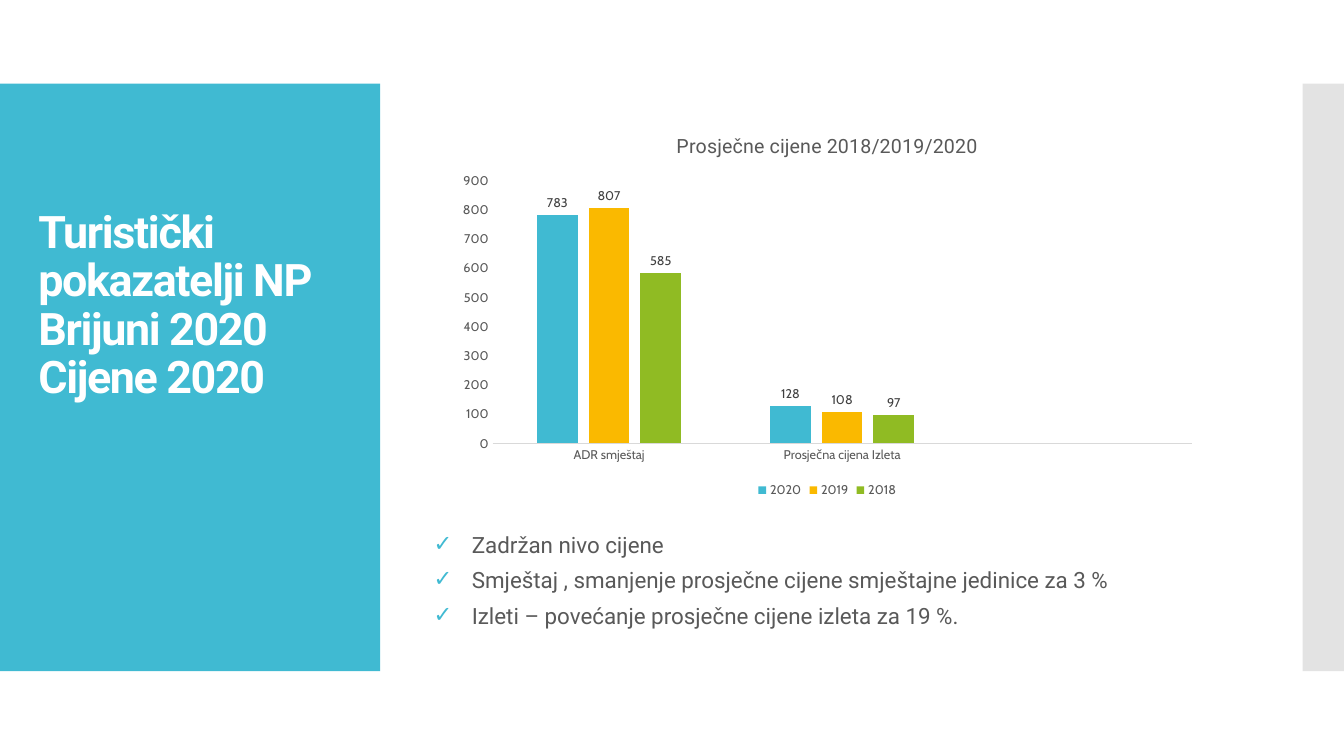
from dataclasses import dataclass

from lxml import etree
from pptx import Presentation
from pptx.chart import data as chart_data
from pptx.dml.color import RGBColor
from pptx.enum import chart as chart_enum, shapes, text
from pptx.oxml import ns
from pptx.util import Inches, Pt


@dataclass(frozen=True)
class Theme:
    accent: str = "40BAD2"
    side_bar: str = "C8C8C8"
    title: str = "FFFFFF"
    body: str = "595959"
    label: str = "404040"
    axis_line: str = "D9D9D9"
    series: tuple = ("40BAD2", "FAB900", "90BB23")
    text_font: str = "Roboto"
    chart_font: str = "Cabin"
    title_size: int = 32
    body_size: int = 16
    chart_title_size: int = 14
    chart_size: int = 9


THEME = Theme()
TITLE = "Turistički pokazatelji NP Brijuni 2020\nCijene 2020"
BULLETS = (
    "Zadržan nivo cijene",
    "Smještaj , smanjenje prosječne cijene smještajne jedinice za 3 %",
    "Izleti – povećanje prosječne cijene izleta za 19 %.",
)
CHART_TITLE = "Prosječne cijene 2018/2019/2020"
CATEGORIES = ("ADR smještaj", "Prosječna cijena Izleta", "")
PRICES = {
    "2020": (783, 128, None),
    "2019": (807, 108, None),
    "2018": (585, 97, None),
}


def color(value):
    return RGBColor.from_string(value)


def style_font(font, name, size, value, bold=False):
    font.name = name
    font.size = Pt(size)
    font.color.rgb = color(value)
    font.bold = bold


def place(shape, left, top, width, height):
    shape.left, shape.top = Inches(left), Inches(top)
    shape.width, shape.height = Inches(width), Inches(height)


def add_panel(slide, left, width, fill, opacity=100):
    panel = slide.shapes.add_shape(
        shapes.MSO_SHAPE.RECTANGLE,
        Inches(left), Inches(0.83), Inches(width), Inches(5.83),
    )
    panel.shadow.inherit = False
    panel.line.fill.background()
    panel.fill.solid()
    panel.fill.fore_color.rgb = color(fill)
    if opacity < 100:
        fill_color = panel.fill._xPr.find(".//" + ns.qn("a:srgbClr"))
        etree.SubElement(fill_color, ns.qn("a:alpha"), val=str(opacity * 1000))


def fill_title(title):
    place(title, 0.28, 1.23, 3.22, 2.82)
    frame = title.text_frame
    frame.text = TITLE
    frame.word_wrap = True
    frame.auto_size = text.MSO_AUTO_SIZE.NONE
    frame.vertical_anchor = text.MSO_ANCHOR.BOTTOM
    for paragraph in frame.paragraphs:
        paragraph.alignment = text.PP_ALIGN.LEFT
        paragraph.line_spacing = 0.9
        paragraph.space_before = Pt(0)
        for run in paragraph.runs:
            style_font(run.font, THEME.text_font, THEME.title_size, THEME.title, True)
            run.font._element.set("spc", "-100")


def add_check_bullet(paragraph):
    properties = paragraph._p.get_or_add_pPr()
    indent = Inches(0.38)
    properties.set("marL", str(indent))
    properties.set("indent", str(-indent))
    bullet_color = etree.SubElement(properties, ns.qn("a:buClr"))
    etree.SubElement(bullet_color, ns.qn("a:srgbClr"), val=THEME.accent)
    etree.SubElement(properties, ns.qn("a:buChar"), char="✓")


def fill_bullets(body):
    place(body, 4.2, 5.29, 8, 1.42)
    frame = body.text_frame
    frame.text = "\n".join(BULLETS)
    frame.word_wrap = True
    frame.auto_size = text.MSO_AUTO_SIZE.NONE
    frame.vertical_anchor = text.MSO_ANCHOR.TOP
    for index, paragraph in enumerate(frame.paragraphs):
        add_check_bullet(paragraph)
        paragraph.line_spacing = 0.7
        paragraph.space_before = Pt(12 if index else 0)
        for run in paragraph.runs:
            style_font(run.font, THEME.text_font, THEME.body_size, THEME.body)


def style_axis(axis):
    axis.has_major_gridlines = False
    axis.major_tick_mark = chart_enum.XL_TICK_MARK.NONE
    axis.minor_tick_mark = chart_enum.XL_TICK_MARK.NONE
    style_font(axis.tick_labels.font, THEME.chart_font, THEME.chart_size, THEME.body)


def style_series(series, fill):
    series.format.fill.solid()
    series.format.fill.fore_color.rgb = color(fill)
    labels = series.data_labels
    labels.show_value = True
    labels.position = chart_enum.XL_LABEL_POSITION.OUTSIDE_END
    style_font(labels.font, THEME.chart_font, THEME.chart_size, THEME.label)


def add_price_chart(slide):
    prices = chart_data.CategoryChartData()
    prices.categories = CATEGORIES
    for year, values in PRICES.items():
        prices.add_series(year, values)
    chart = slide.shapes.add_chart(
        chart_enum.XL_CHART_TYPE.COLUMN_CLUSTERED,
        Inches(4.44), Inches(1.15), Inches(7.53), Inches(3.83), prices,
    ).chart
    style_font(chart.font, THEME.chart_font, THEME.chart_size, THEME.body)

    chart.has_title = True
    title_frame = chart.chart_title.text_frame
    title_frame.text = CHART_TITLE
    style_font(title_frame.paragraphs[0].runs[0].font, THEME.text_font,
               THEME.chart_title_size, THEME.body)
    chart.chart_title.include_in_layout = False

    chart.has_legend = True
    chart.legend.position = chart_enum.XL_LEGEND_POSITION.BOTTOM
    chart.legend.include_in_layout = False
    style_font(chart.legend.font, THEME.chart_font, THEME.chart_size, THEME.body)

    style_axis(chart.category_axis)
    chart.category_axis.format.line.color.rgb = color(THEME.axis_line)
    chart.category_axis.format.line.width = Pt(0.75)
    style_axis(chart.value_axis)
    chart.value_axis.format.line.fill.background()
    chart.value_axis.minimum_scale = 0
    chart.value_axis.maximum_scale = 900
    chart.value_axis.major_unit = 100

    plot = chart.plots[0]
    plot.vary_by_categories = False
    plot.gap_width = 219
    plot.overlap = -27
    for series, fill in zip(plot.series, THEME.series):
        style_series(series, fill)


def main():
    presentation = Presentation()
    presentation.slide_width = Inches(13.33)
    presentation.slide_height = Inches(7.5)
    layout = presentation.slide_layouts.get_by_name("Title and Content")
    slide = presentation.slides.add_slide(layout)
    title, body = slide.placeholders
    add_panel(slide, 0, 3.77, THEME.accent)
    add_panel(slide, 12.92, 0.41, THEME.side_bar, opacity=50)
    for placeholder in (title, body):
        slide.shapes._spTree.append(placeholder._element)
    fill_title(title)
    fill_bullets(body)
    add_price_chart(slide)
    presentation.save("out.pptx")


if __name__ == "__main__":
    main()
